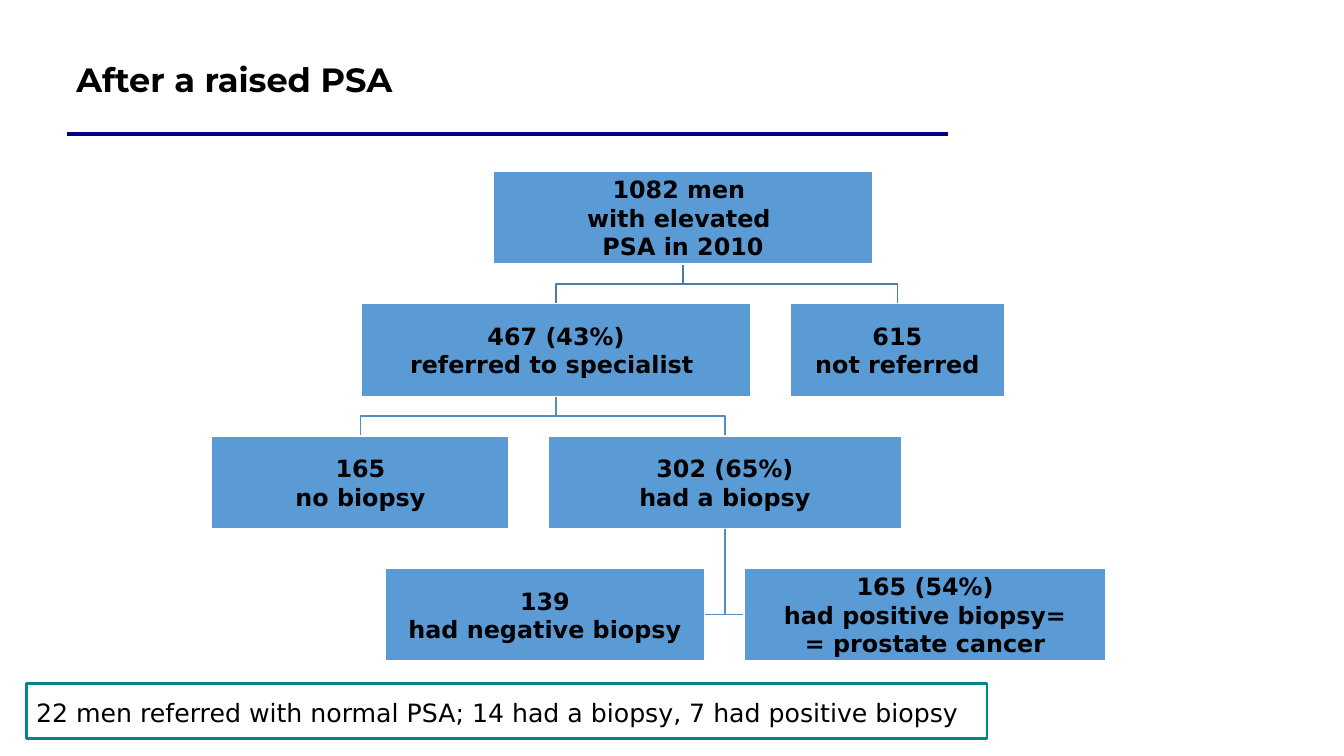
from pptx import Presentation
from pptx.dml.color import RGBColor
from pptx.enum.shapes import MSO_CONNECTOR, MSO_SHAPE
from pptx.enum.text import MSO_ANCHOR, PP_ALIGN
from pptx.oxml.ns import qn
from pptx.util import Inches, Pt
from lxml import etree

RECT = MSO_SHAPE.RECTANGLE
STRAIGHT = MSO_CONNECTOR.STRAIGHT
MIDDLE, BOTTOM, TOP = MSO_ANCHOR.MIDDLE, MSO_ANCHOR.BOTTOM, MSO_ANCHOR.TOP
LEFT, CENTER = PP_ALIGN.LEFT, PP_ALIGN.CENTER


class Theme:
    text = RGBColor(0x00, 0x00, 0x00)
    rule = RGBColor(0x00, 0x00, 0x80)
    box = RGBColor(0x5B, 0x9B, 0xD5)
    box_line = RGBColor(0xFF, 0xFF, 0xFF)
    upper_link = RGBColor(0x49, 0x7C, 0xAB)
    lower_link = RGBColor(0x53, 0x8D, 0xC1)
    note_line = RGBColor(0x00, 0x85, 0x8B)
    title_font, body_font = "Montserrat", "DejaVu Sans"
    title_size, box_size, note_size = Pt(24), Pt(17), Pt(18)


def add_lines(tf, lines, font, size, bold, align, spacing=1.0):
    tf.word_wrap = True
    for i, line in enumerate(lines):
        p = tf.paragraphs[0] if i == 0 else tf.add_paragraph()
        p.alignment = align
        p.line_spacing = spacing
        r = p.add_run()
        r.text = line
        r.font.name = font
        r.font.size = size
        r.font.bold = bold
        r.font.color.rgb = Theme.text


def add_link(s, points, color):
    pts = [(Inches(x), Inches(y)) for x, y in points]
    builder = s.shapes.build_freeform(*pts[0])
    builder.add_line_segments(pts[1:], close=False)
    sp = builder.convert_to_shape()
    sp.shadow.inherit = False
    sp.fill.background()
    sp.line.color.rgb = color
    sp.line.width = Pt(1)


prs = Presentation()
prs.slide_width, prs.slide_height = Inches(13.33), Inches(7.5)
s = prs.slides.add_slide(prs.slide_layouts[6])

# Title and rule
sp = s.shapes.add_textbox(Inches(0.66), Inches(0.29), Inches(8.42), Inches(0.75))
sp.text_frame.vertical_anchor = BOTTOM
add_lines(sp.text_frame, ["After a raised PSA"], Theme.title_font,
          Theme.title_size, True, LEFT, 0.9)

rule = s.shapes.add_connector(STRAIGHT, Inches(0.66), Inches(1.33), Inches(9.4), Inches(1.33))
rule.line.color.rgb = Theme.rule
rule.line.width = Pt(2.75)
etree.SubElement(rule._element.spPr, qn("a:effectLst"))

# Flow chart: left, width, level and lines of each box
row_top, row_step, box_h = 1.7, 1.313, 0.92
boxes = {
    "elevated": (4.89, 3.77, 0, ["1082 men ", "with elevated ", "PSA in 2010"]),
    "referred": (3.58, 3.87, 1, ["467 (43%)", "referred to specialist "]),
    "not_referred": (7.84, 2.12, 1, ["615", "not referred"]),
    "no_biopsy": (2.1, 2.95, 2, ["165", "no biopsy"]),
    "biopsy": (5.44, 3.5, 2, ["302 (65%)", "had a biopsy"]),
    "negative": (3.82, 3.17, 3, ["139", "had negative biopsy"]),
    "positive": (7.38, 3.59, 3, ["165 (54%)", "had positive biopsy=", "= prostate cancer"]),
}
center = {name: left + width / 2 for name, (left, width, _, _) in boxes.items()}
top = {name: row_top + level * row_step for name, (_, _, level, _) in boxes.items()}

# Links that drop to the top of a child
for parent, child, color in [
    ("elevated", "not_referred", Theme.upper_link),
    ("elevated", "referred", Theme.upper_link),
    ("referred", "biopsy", Theme.lower_link),
    ("referred", "no_biopsy", Theme.lower_link),
]:
    start, end = top[parent] + box_h, top[child]
    mid = (start + end) / 2
    add_link(s, [(center[parent], start), (center[parent], mid),
                 (center[child], mid), (center[child], end)], color)

# Links that reach the inner side of a child
trunk, side_y = center["biopsy"], top["negative"] + box_h / 2
for side_x in (boxes["positive"][0], sum(boxes["negative"][:2])):
    add_link(s, [(trunk, top["biopsy"] + box_h), (trunk, side_y), (side_x, side_y)],
             Theme.lower_link)

# Boxes
for name, (left, width, _, lines) in boxes.items():
    sp = s.shapes.add_shape(RECT, Inches(left), Inches(top[name]), Inches(width), Inches(box_h))
    sp.shadow.inherit = False
    sp.fill.solid()
    sp.fill.fore_color.rgb = Theme.box
    sp.line.color.rgb = Theme.box_line
    sp.line.width = Pt(1)
    tf = sp.text_frame
    tf.margin_left = tf.margin_right = tf.margin_top = tf.margin_bottom = Inches(0.01)
    tf.vertical_anchor = MIDDLE
    add_lines(tf, lines, Theme.body_font, Theme.box_size, True, CENTER)

# Note
sp = s.shapes.add_shape(RECT, Inches(0.26), Inches(6.78), Inches(9.53), Inches(0.55))
sp.shadow.inherit = False
sp.fill.background()
sp.line.color.rgb = Theme.note_line
sp.line.width = Pt(2)
sp.text_frame.vertical_anchor = TOP
add_lines(sp.text_frame,
          ["22 men referred with normal PSA; 14 had a biopsy, 7 had positive biopsy"],
          Theme.body_font, Theme.note_size, False, LEFT, 1.3)

prs.save("out.pptx")
